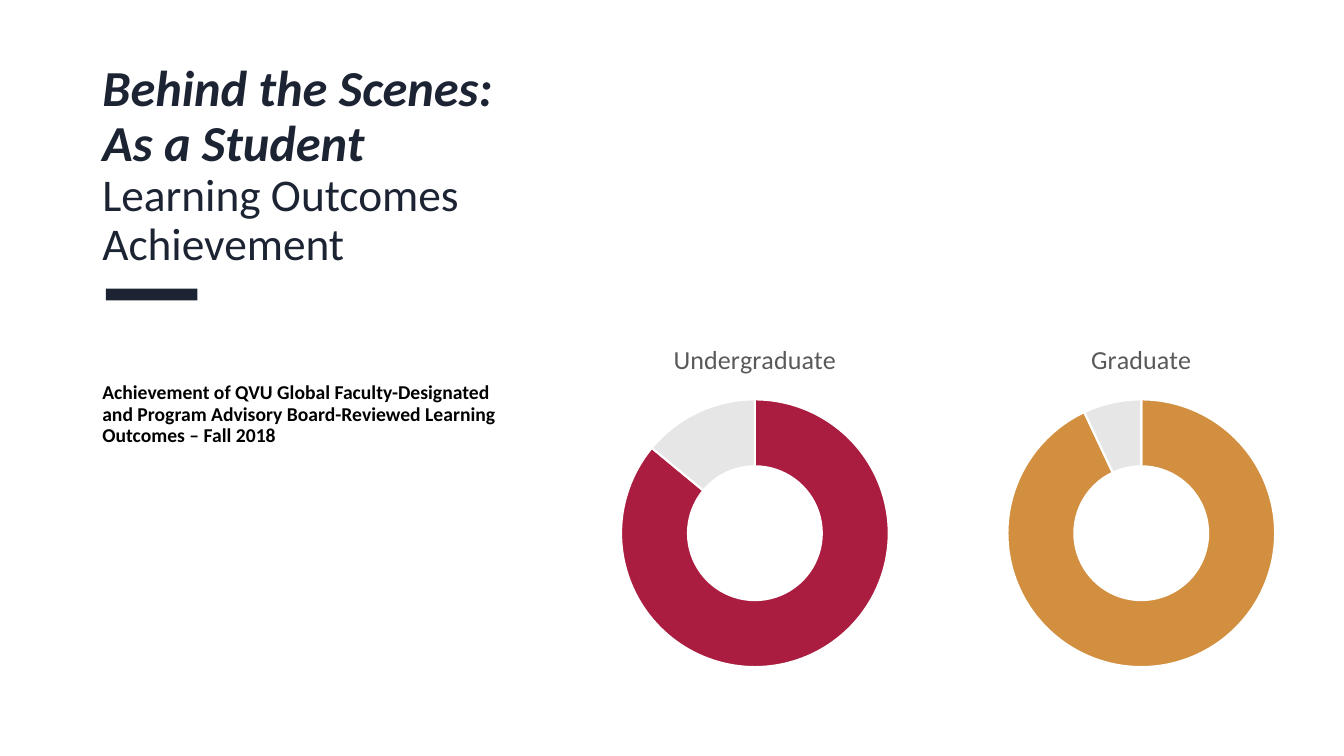
"""Build the learning outcomes slide with two doughnut charts."""
from pptx import Presentation
from pptx.chart.data import CategoryChartData
from pptx.dml.color import RGBColor
from pptx.enum.chart import XL_CHART_TYPE
from pptx.enum.shapes import MSO_SHAPE
from pptx.enum.text import MSO_ANCHOR
from pptx.oxml import parse_xml
from pptx.oxml.ns import nsdecls
from pptx.util import Pt

PX = 9525
FONT = "Calibri"
COLORS = {
    "navy": "1C2333", "black": "000000", "gray": "595959", "rest": "E7E6E6",
    "white": "FFFFFF", "red": "AA1D40", "gold": "D28F3F",
}
LAYOUT = {"x": 0.17, "y": 0.21, "w": 0.66, "h": 0.75}


def rgb(name):
    return RGBColor.from_string(COLORS[name])


def write(para, text, size, color, bold=False, italic=False):
    run = para.add_run()
    run.text = text
    font = run.font
    font.name, font.size = FONT, Pt(size)
    font.bold, font.italic = bold, italic
    font.color.rgb = rgb(color)


deck = Presentation()
deck.slide_width, deck.slide_height = 1280 * PX, 720 * PX
slide = deck.slides.add_slide(deck.slide_layouts[6])
shapes = slide.shapes

bar = shapes.add_shape(MSO_SHAPE.RECTANGLE, 101 * PX, 275 * PX, 87 * PX, 11 * PX)
bar.shadow.inherit = False
bar.fill.solid()
bar.fill.fore_color.rgb = rgb("navy")
bar.line.fill.background()

paras = []
for top, high, anchor in [(99, 163, MSO_ANCHOR.BOTTOM), (360, 163, MSO_ANCHOR.TOP)]:
    frame = shapes.add_textbox(88 * PX, top * PX, 399 * PX, high * PX).text_frame
    frame.word_wrap = True
    frame.vertical_anchor = anchor
    para = frame.paragraphs[0]
    para.line_spacing = 0.9
    paras.append(para)

title, body = paras
write(title, "Behind the Scenes: As a Student", 36, "navy", bold=True, italic=True)
title.add_line_break()
write(title, "Learning Outcomes Achievement", 32.4, "navy")
write(body, "Achievement of QVU Global Faculty-Designated and Program Advisory "
      "Board-Reviewed Learning Outcomes – Fall 2018", 14, "black", bold=True)

for left, level, share, color in [
    (525, "Undergraduate", 86, "red"),
    (893, "Graduate", 93, "gold"),
]:
    data = CategoryChartData()
    data.categories = ["1", "2", "3", "4"]
    data.add_series(level, [share, 100 - share, None, None])
    chart = shapes.add_chart(XL_CHART_TYPE.DOUGHNUT, left * PX, 309 * PX,
                             388 * PX, 340 * PX, data).chart
    chart.has_legend = False
    chart.font.name, chart.font.size = FONT, Pt(10)
    chart.font.color.rgb = rgb("black")
    chart.has_title = True
    write(chart.chart_title.text_frame.paragraphs[0], level, 18.6, "gray")
    chart.chart_title.include_in_layout = False

    plot = chart.plots[0]
    plot.vary_by_categories = True
    for hole in plot._element.xpath("c:holeSize"):
        hole.set("val", "75")
    for i, tint in enumerate([color, "rest"]):
        style = plot.series[0].points[i].format
        style.fill.solid()
        style.fill.fore_color.rgb = rgb(tint)
        style.line.color.rgb = rgb("white")
        style.line.width = Pt(1.5)

    area = chart._chartSpace.chart.plotArea
    for old in area.xpath("c:layout"):
        area.remove(old)
    sides = "".join(f'<c:{side} val="{part}"/>' for side, part in LAYOUT.items())
    area.insert(0, parse_xml(
        f'<c:layout {nsdecls("c")}><c:manualLayout><c:layoutTarget val="inner"/>'
        f'<c:xMode val="edge"/><c:yMode val="edge"/>{sides}'
        '</c:manualLayout></c:layout>'))

deck.save("out.pptx")
